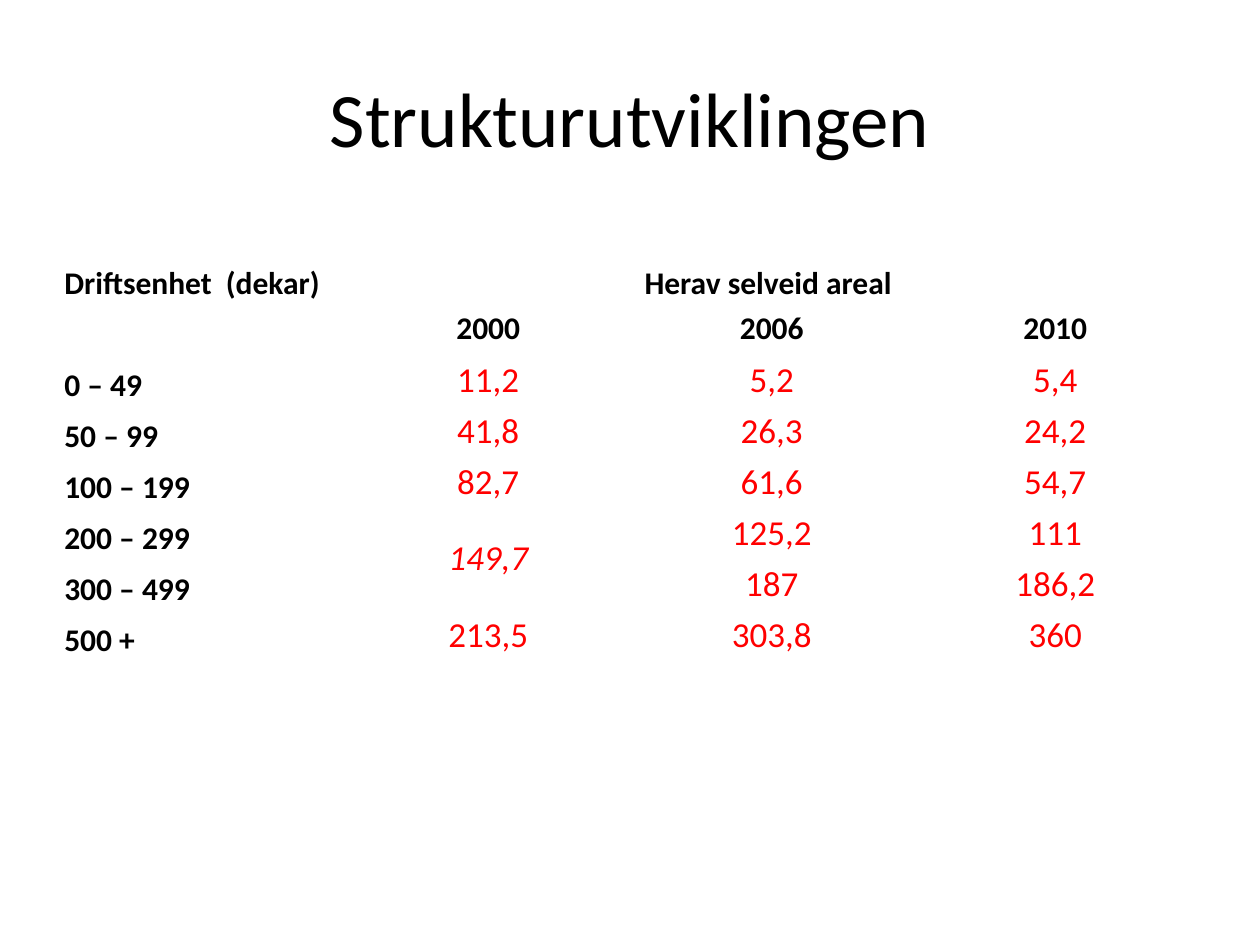
from dataclasses import dataclass

from pptx import Presentation
from pptx.dml.color import RGBColor as RGB
from pptx.enum.text import MSO_ANCHOR as Anchor, PP_ALIGN as Align
from pptx.util import Pt


@dataclass(frozen=True)
class Theme:
    face: str = "Calibri"
    ink: RGB = RGB(0, 0, 0)
    red: RGB = RGB(255, 0, 0)
    title: int = 44
    label: int = 18
    value: int = 20


theme = Theme()


def style(para, size, color, bold=False, align=Align.CENTER):
    para.alignment = align
    font = para.font
    font.name, font.size, font.bold = theme.face, Pt(size), bold
    font.color.rgb = color


deck = Presentation()
deck.slide_width, deck.slide_height = Pt(720), Pt(540)
slide = deck.slides.add_slide(deck.slide_layouts[5])

title = slide.shapes.title
title.left, title.top, title.width, title.height = Pt(36), Pt(21.6), Pt(648), Pt(90)
title.text_frame.text = "Strukturutviklingen"
title.text_frame.vertical_anchor = Anchor.MIDDLE
style(title.text_frame.paragraphs[0], theme.title, theme.ink)

rows = [
    ("Driftsenhet  (dekar)", "Herav selveid areal ", "", ""),
    ("", "2000", "2006", "2010"),
    ("0 – 49", "11,2", "5,2", "5,4"),
    ("50 – 99", "41,8", "26,3", "24,2"),
    ("100 – 199", "82,7", "61,6", "54,7"),
    ("200 – 299", "149,7", "125,2", "111"),
    ("300 – 499", "", "187", "186,2"),
    ("500 +", "213,5", "303,8", "360"),
]
high = 29.16
frame = slide.shapes.add_table(
    len(rows), 4, Pt(36), Pt(144), Pt(648), Pt(high * len(rows)))
table = frame.table
table.first_row = table.horz_banding = False
for row in table.rows:
    row.height = Pt(high)

for r, texts in enumerate(rows):
    for c, text in enumerate(texts):
        cell = table.cell(r, c)
        cell.fill.background()
        cell.margin_left = cell.margin_right = cell.margin_top = Pt(0.75)
        cell.margin_bottom = Pt(0)
        low = c == 0 or r == 0
        cell.vertical_anchor = Anchor.BOTTOM if low else Anchor.MIDDLE
        cell.text = text
        para = cell.text_frame.paragraphs[0]
        if c == 0:
            style(para, theme.label, theme.ink, True, Align.LEFT)
        elif r < 2:
            style(para, theme.label, theme.ink, True)
        else:
            style(para, theme.value, theme.red)

table.cell(0, 1).merge(table.cell(0, 3))
joint = table.cell(5, 1)
joint.merge(table.cell(6, 1))
joint.text_frame.paragraphs[0].font.italic = True

deck.save("out.pptx")
